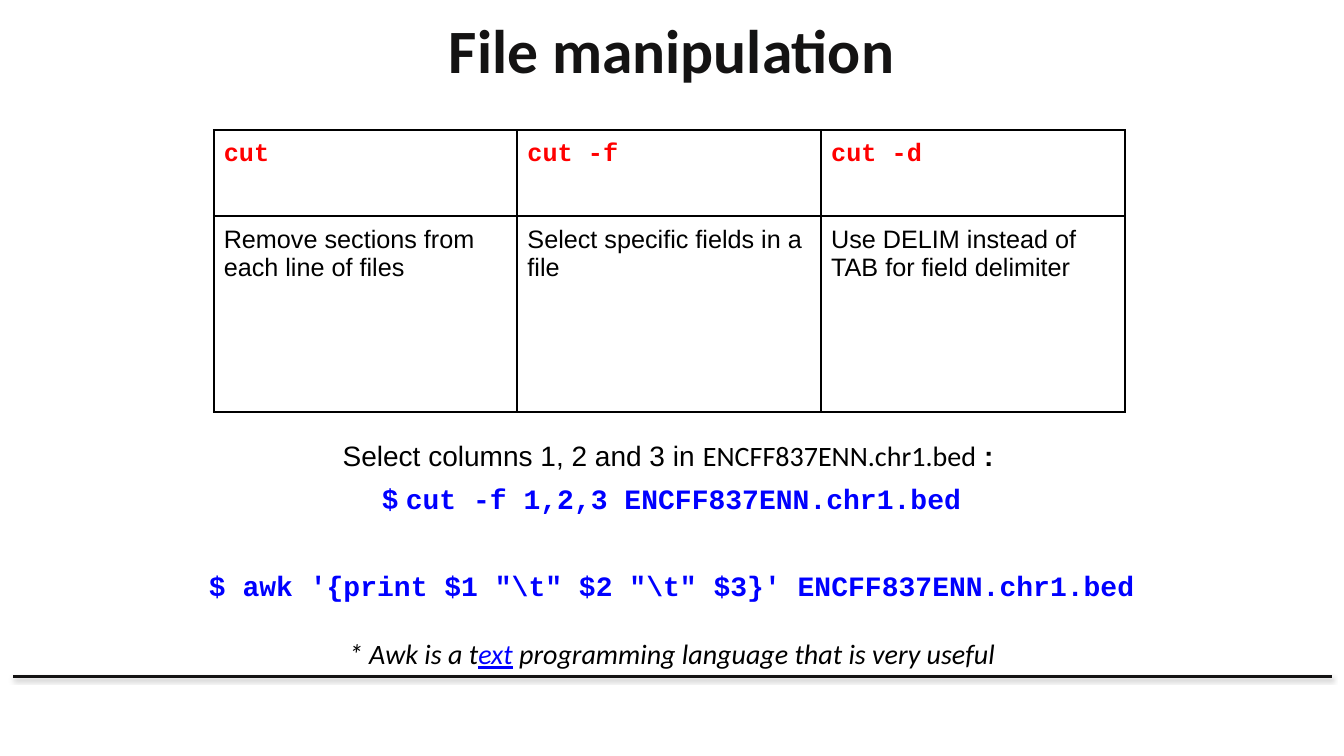
import pptx
import pptx.dml.color
import pptx.enum.shapes
import pptx.enum.text
import pptx.oxml
import pptx.oxml.ns
import pptx.util
from dataclasses import dataclass

Inches, Pt = pptx.util.Inches, pptx.util.Pt
ANCHOR, ALIGN = pptx.enum.text.MSO_ANCHOR, pptx.enum.text.PP_ALIGN
WIDTH, HEIGHT = 13.33, 7.5
BED_FILE = "ENCFF837ENN.chr1.bed"


@dataclass(frozen=True)
class Theme:
    ink: str = "141313"
    text: str = "000000"
    option: str = "FF0000"
    command: str = "0000FF"
    sans: str = "Arial"
    label: str = "Calibri"
    code: str = "Courier New"
    title_size: int = 44
    table_size: int = 18
    body_size: int = 20
    inset: float = 0.1


THEME = Theme()


def box(left, top, width, height):
    """Turn shares of the slide into lengths."""
    return (Inches(left * WIDTH), Inches(top * HEIGHT),
            Inches(width * WIDTH), Inches(height * HEIGHT))


def color(value):
    return pptx.dml.color.RGBColor.from_string(value)


def add_xml(parent, xml):
    declared = xml.replace(">", " " + pptx.oxml.ns.nsdecls("a") + ">", 1)
    parent.append(pptx.oxml.parse_xml(declared))


def write(paragraph, text, size=THEME.body_size, font=THEME.sans, ink=THEME.text,
          bold=False, italic=False, underline=False):
    run = paragraph.add_run()
    run.text = text
    style = run.font
    style.size, style.name = Pt(size), font
    style.bold, style.italic, style.underline = bold, italic, underline
    style.color.rgb = color(ink)


def add_title(slide, text):
    title = slide.shapes.title
    title.left, title.top, title.width, title.height = box(0.05, 0.001, 0.9, 0.128)
    frame = title.text_frame
    frame.auto_size = pptx.enum.text.MSO_AUTO_SIZE.NONE
    frame.vertical_anchor = ANCHOR.MIDDLE
    frame.paragraphs[0].alignment = ALIGN.CENTER
    write(frame.paragraphs[0], text, THEME.title_size, THEME.label, THEME.ink, bold=True)


def add_footer_rule(slide):
    left, top, width, _ = box(0.01, 0.895, 0.981, 0)
    rule = slide.shapes.add_connector(
        pptx.enum.shapes.MSO_CONNECTOR.STRAIGHT, left, top, left + width, top)
    rule.line.color.rgb = color(THEME.ink)
    rule.line.width = Pt(2)
    add_xml(rule._element.spPr,
            f'<a:effectLst><a:outerShdw blurRad="{Pt(3.1)}" dist="{Pt(1.6)}" dir="5400000" '
            'rotWithShape="0"><a:srgbClr val="000000"><a:alpha val="38000"/></a:srgbClr>'
            '</a:outerShdw></a:effectLst>')


def fill_cell(cell, text, **style):
    cell.margin_left = cell.margin_right = Inches(THEME.inset)
    cell.margin_top = cell.margin_bottom = Inches(THEME.inset)
    write(cell.text_frame.paragraphs[0], text, THEME.table_size, **style)
    properties = cell._tc.get_or_add_tcPr()
    for side in ("lnL", "lnR", "lnT", "lnB"):
        add_xml(properties, f'<a:{side} w="{Pt(1.5)}"><a:solidFill><a:srgbClr '
                            f'val="{THEME.text}"/></a:solidFill></a:{side}>')
    cell.fill.background()


def add_option_table(slide, options):
    area = box(0.159, 0.172, 0.678, 0.374)
    table = slide.shapes.add_table(2, len(options), *area).table
    table.first_row = table.horz_banding = False
    for row, height in zip(table.rows, (0.85, 1.95)):
        row.height = Inches(height)
    for column, (option, meaning) in enumerate(options):
        fill_cell(table.cell(0, column), option,
                  font=THEME.code, ink=THEME.option, bold=True)
        fill_cell(table.cell(1, column), meaning)


def add_centred_lines(slide, area, lines, gaps):
    """Each line is a list of (text, format) pieces; gaps are points above lines."""
    frame = slide.shapes.add_textbox(*area).text_frame
    frame.word_wrap = True
    frame.margin_left = frame.margin_right = Inches(THEME.inset)
    frame.margin_top = frame.margin_bottom = Inches(THEME.inset)
    for index, (pieces, gap) in enumerate(zip(lines, gaps)):
        paragraph = frame.add_paragraph() if index else frame.paragraphs[0]
        paragraph.alignment = ALIGN.CENTER
        paragraph.space_before = Pt(gap)
        for text, style in pieces:
            write(paragraph, text, **style)


def main():
    deck = pptx.Presentation()
    deck.slide_width, deck.slide_height = Inches(WIDTH), Inches(HEIGHT)
    slide = deck.slides.add_slide(deck.slide_layouts[5])

    # Title and footer rule
    add_footer_rule(slide)
    add_title(slide, "File manipulation")

    # Options of the command
    add_option_table(slide, [
        ("cut", "Remove sections from each line of files"),
        ("cut -f", "Select specific fields in a file"),
        ("cut -d", "Use DELIM instead of TAB for field delimiter"),
    ])

    # Task and its solution with cut
    command = dict(font=THEME.code, ink=THEME.command, bold=True)
    task = [("Select columns 1, 2 and 3 in ", {}),
            (BED_FILE, dict(font=THEME.label)),
            (" : ", dict(bold=True))]
    cut_line = [("$ ", dict(ink=THEME.command, bold=True)),
                (f"cut -f 1,2,3 {BED_FILE}", command)]
    add_centred_lines(slide, box(0.02, 0.567, 0.96, 0.161), [task, cut_line], (6.4, 6.4))

    # Solution with awk and a remark
    remark = dict(font=THEME.label, italic=True)
    awk_line = [(r"""$ awk '{print $1 "\t" $2 "\t" $3}' """ + BED_FILE, command)]
    awk_note = [("* Awk is a t", remark),
                ("ext", dict(remark, ink=THEME.command, underline=True)),
                (" programming language that is very useful", remark)]
    add_centred_lines(slide, box(0.143, 0.739, 0.714, 0.171), [awk_line, awk_note], (0, 24.4))

    deck.save("out.pptx")


if __name__ == "__main__":
    main()
